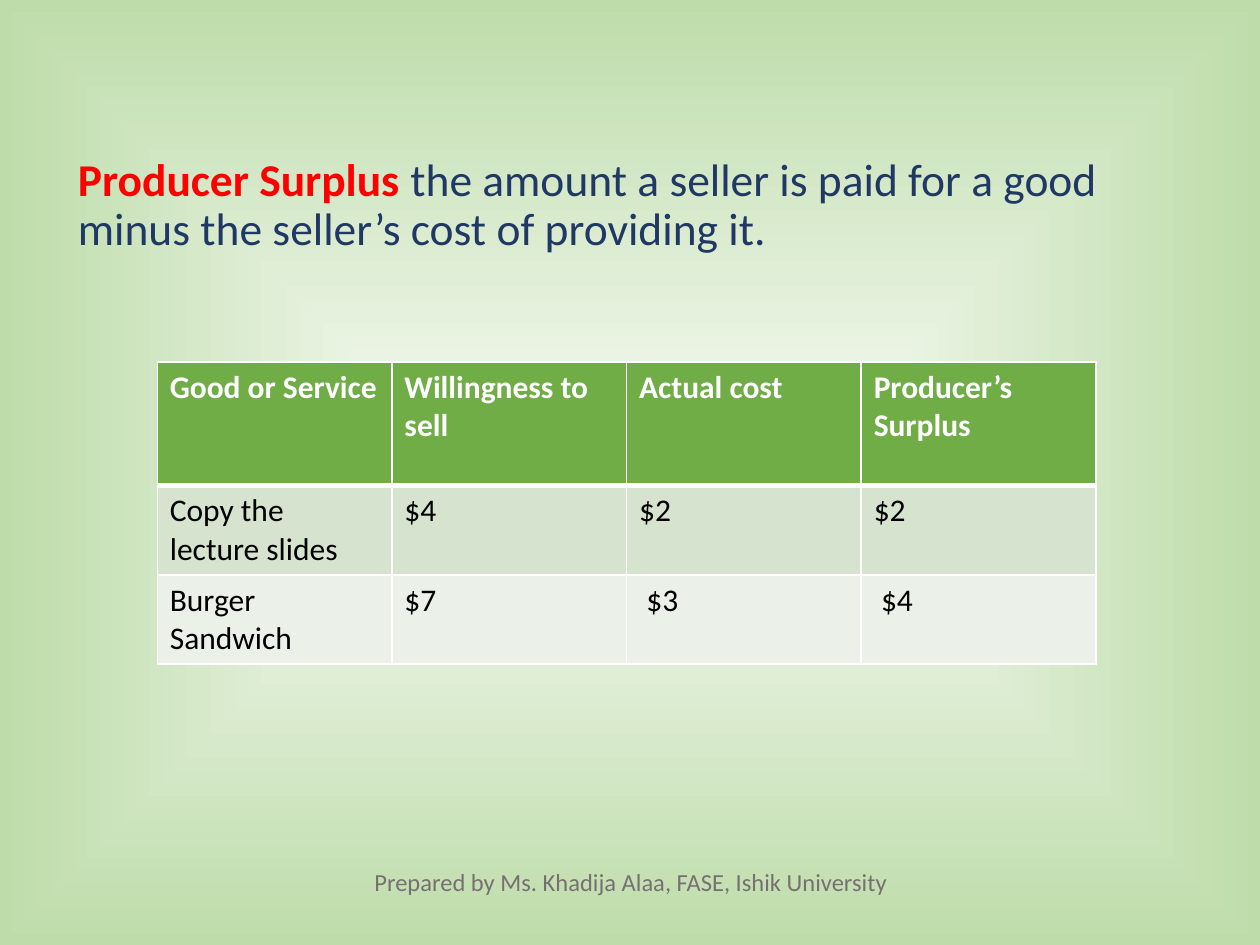
from pptx import Presentation
from pptx.dml.color import RGBColor
from pptx.enum.text import PP_ALIGN
from pptx.oxml import parse_xml
from pptx.oxml.ns import nsdecls
from pptx.util import Cm, Pt

COLORS = {
    "center": "F8FBF6", "edge": "BEDCAA", "term": "FF0000",
    "definition": "203864", "footer": "767171", "white": "FFFFFF",
    "black": "000000", "header": "70AD47", "odd": "D5E3CF", "even": "EBF1E9",
}
DEFINITION = [
    ("Producer Surplus ", {"size": Pt(26), "bold": True}, "term"),
    ("the amount a seller is paid for a good minus the seller’s cost of providing it.",
     {"size": Pt(26), "bold": False}, "definition"),
]
FOOTER = [("Prepared by Ms. Khadija Alaa, FASE, Ishik University", {"size": Pt(14)}, "footer")]
ROWS = [
    ["Good or Service", "Willingness to sell", "Actual cost", "Producer’s Surplus"],
    ["Copy the lecture slides", "$4", "$2", "$2"],
    ["Burger Sandwich", "$7", "$3", "$4"],
]
ROW_FILLS = ["header", "odd", "even"]
ROW_HEIGHTS = [2.49, 1.8, 1.8]
COLUMN_WIDTH = 4.73
INDENTED = {(2, 2), (2, 3)}


def add_spans(paragraph, spans):
    for text, formats, color in spans:
        span = paragraph.add_run()
        span.text = text
        span.font.name = "Calibri"
        span.font.color.rgb = RGBColor.from_string(COLORS[color])
        for name, value in formats.items():
            setattr(span.font, name, value)


def add_text(page, place, spans, **formats):
    box = page.shapes.add_textbox(*map(Cm, place))
    box.text_frame.word_wrap = True
    paragraph = box.text_frame.paragraphs[0]
    for name, value in formats.items():
        setattr(paragraph, name, value)
    add_spans(paragraph, spans)


def set_background(page):
    stops = "".join(
        f'<a:gs pos="{position}"><a:srgbClr val="{COLORS[name]}"/></a:gs>'
        for position, name in ((0, "center"), (100000, "edge"))
    )
    page.element.cSld.insert(0, parse_xml(
        f'<p:bg {nsdecls("p", "a")}><p:bgPr><a:gradFill rotWithShape="1">'
        f'<a:gsLst>{stops}</a:gsLst><a:path path="shape">'
        '<a:fillToRect l="50000" t="50000" r="50000" b="50000"/></a:path>'
        '</a:gradFill><a:effectLst/></p:bgPr></p:bg>'
    ))


def set_borders(cell, row):
    widths = {"L": 1, "R": 1, "T": 3 if row == 1 else 1, "B": 3 if row == 0 else 1}
    properties = cell._tc.get_or_add_tcPr()
    for index, (side, width) in enumerate(widths.items()):
        properties.insert(index, parse_xml(
            f'<a:ln{side} {nsdecls("a")} w="{Pt(width)}"><a:solidFill>'
            f'<a:srgbClr val="{COLORS["white"]}"/></a:solidFill></a:ln{side}>'
        ))


def add_surplus_table(page):
    columns = len(ROWS[0])
    table = page.shapes.add_table(
        len(ROWS), columns, Cm(3.17), Cm(7.3),
        Cm(COLUMN_WIDTH * columns), Cm(sum(ROW_HEIGHTS)),
    ).table
    for column in table.columns:
        column.width = Cm(COLUMN_WIDTH)
    for row, texts in enumerate(ROWS):
        table.rows[row].height = Cm(ROW_HEIGHTS[row])
        is_header = row == 0
        for column, text in enumerate(texts):
            cell = table.cell(row, column)
            cell.fill.solid()
            cell.fill.fore_color.rgb = RGBColor.from_string(COLORS[ROW_FILLS[row]])
            set_borders(cell, row)
            if (row, column) in INDENTED:
                cell.margin_left = Cm(0.4)
            formats = {"size": Pt(18), "bold": is_header}
            color = "white" if is_header else "black"
            add_spans(cell.text_frame.paragraphs[0], [(text, formats, color)])


def main():
    deck = Presentation()
    deck.slide_width, deck.slide_height = Cm(25.4), Cm(19.05)
    page = deck.slides.add_slide(deck.slide_layouts[6])
    set_background(page)
    add_text(page, (1.32, 3.05, 21.9, 10.5), DEFINITION, line_spacing=0.9)
    add_text(page, (4.16, 17.35, 17.12, 1.52), FOOTER, alignment=PP_ALIGN.CENTER)
    add_surplus_table(page)
    deck.save("out.pptx")


if __name__ == "__main__":
    main()
